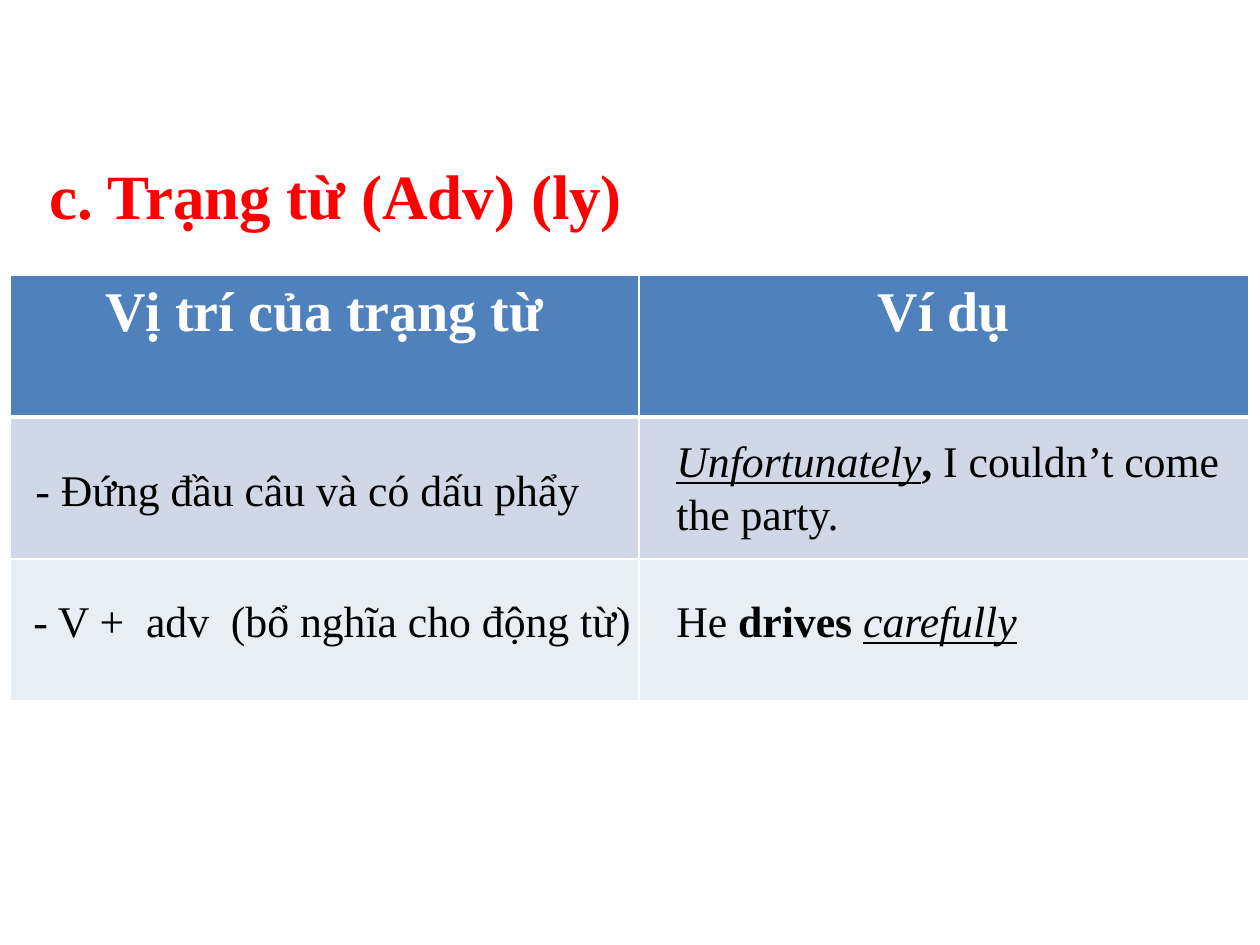
from dataclasses import dataclass

from lxml import etree
from pptx import Presentation
from pptx.dml.color import RGBColor
from pptx.enum.text import MSO_ANCHOR, MSO_AUTO_SIZE, PP_ALIGN
from pptx.oxml.ns import qn
from pptx.util import Emu, Pt

LEFT, CENTER = PP_ALIGN.LEFT, PP_ALIGN.CENTER
TOP = MSO_ANCHOR.TOP
GROW = MSO_AUTO_SIZE.SHAPE_TO_FIT_TEXT
TITLE_ONLY = 5
DPI = 126


@dataclass(frozen=True)
class Theme:
    font: str = "Times New Roman"
    title: str = "FF0000"
    head: str = "4F81BD"
    bands: tuple = ("D0D8E8", "E9EDF4")
    light: str = "FFFFFF"
    ink: str = "000000"
    title_pt: int = 36
    head_pt: int = 32
    body_pt: int = 25
    rule_pt: int = 1
    head_rule_pt: int = 3


THEME = Theme()
HEADS = ("Vị trí của trạng từ", "Ví dụ")
COLS = (629, 610)
ROW = 142

# Each note: its box in px, then its runs as (text, style letters).
NOTES = (
    ((23, 457, 609, 66), (("- Đứng đầu câu và có dấu phẩy", ""),)),
    ((664, 428, 599, 118), (("Unfortunately", "iu"), (",", "b"),
                            (" I couldn’t come the party.", ""))),
    ((21, 588, 630, 66), (("- V +  adv  (bổ nghĩa cho động từ)", ""),)),
    ((664, 588, 513, 66), (("He ", ""), ("drives ", "b"),
                           ("carefully", "iu"))),
)


def px(count):
    return Emu(round(count * 914400 / DPI))


def add_run(para, text, size, color, style=""):
    """Add one run; style holds any of the letters b, i and u."""
    run = para.add_run()
    run.text = text
    font = run.font
    font.name, font.size = THEME.font, Pt(size)
    font.color.rgb = RGBColor.from_string(color)
    font.bold, font.italic, font.underline = (key in style for key in "biu")


def set_frame(frame):
    frame.word_wrap = True
    frame.auto_size = GROW
    frame.vertical_anchor = TOP


def set_title(slide, text):
    title = slide.shapes.title
    title.left, title.top, title.width, title.height = map(px, (37, 150, 599, 89))
    set_frame(title.text_frame)
    para = title.text_frame.paragraphs[0]
    para.alignment = LEFT
    add_run(para, text, THEME.title_pt, THEME.title, "b")


def set_edges(cell, low):
    """Rule all four sides of a cell, the bottom one low points wide."""
    props = cell._tc.get_or_add_tcPr()
    for spot, side in enumerate("LRTB"):
        width = low if side == "B" else THEME.rule_pt
        line = etree.Element(qn(f"a:ln{side}"), w=str(Pt(width)))
        fill = etree.SubElement(line, qn("a:solidFill"))
        etree.SubElement(fill, qn("a:srgbClr"), val=THEME.light)
        props.insert(spot, line)


def add_grid(slide):
    fills = (THEME.head, *THEME.bands)
    frame = slide.shapes.add_table(len(fills), len(COLS), px(10), px(275),
                                   px(sum(COLS)), px(ROW * len(fills)))
    table = frame.table
    for col, width in zip(table.columns, COLS):
        col.width = px(width)
    for row, color in zip(table.rows, fills):
        row.height = px(ROW)
        low = THEME.head_rule_pt if color == THEME.head else THEME.rule_pt
        for cell in row.cells:
            cell.fill.solid()
            cell.fill.fore_color.rgb = RGBColor.from_string(color)
            set_edges(cell, low)
    for cell, text in zip(table.rows[0].cells, HEADS):
        para = cell.text_frame.paragraphs[0]
        para.alignment = CENTER
        add_run(para, text, THEME.head_pt, THEME.light, "b")


def add_note(slide, box, runs):
    frame = slide.shapes.add_textbox(*map(px, box)).text_frame
    set_frame(frame)
    for text, style in runs:
        add_run(frame.paragraphs[0], text, THEME.body_pt, THEME.ink, style)


def main():
    deck = Presentation()
    deck.slide_width, deck.slide_height = px(1260), px(945)
    slide = deck.slides.add_slide(deck.slide_layouts[TITLE_ONLY])
    add_grid(slide)
    set_title(slide, "c. Trạng từ (Adv) (ly)")
    for box, runs in NOTES:
        add_note(slide, box, runs)
    deck.save("out.pptx")


if __name__ == "__main__":
    main()
